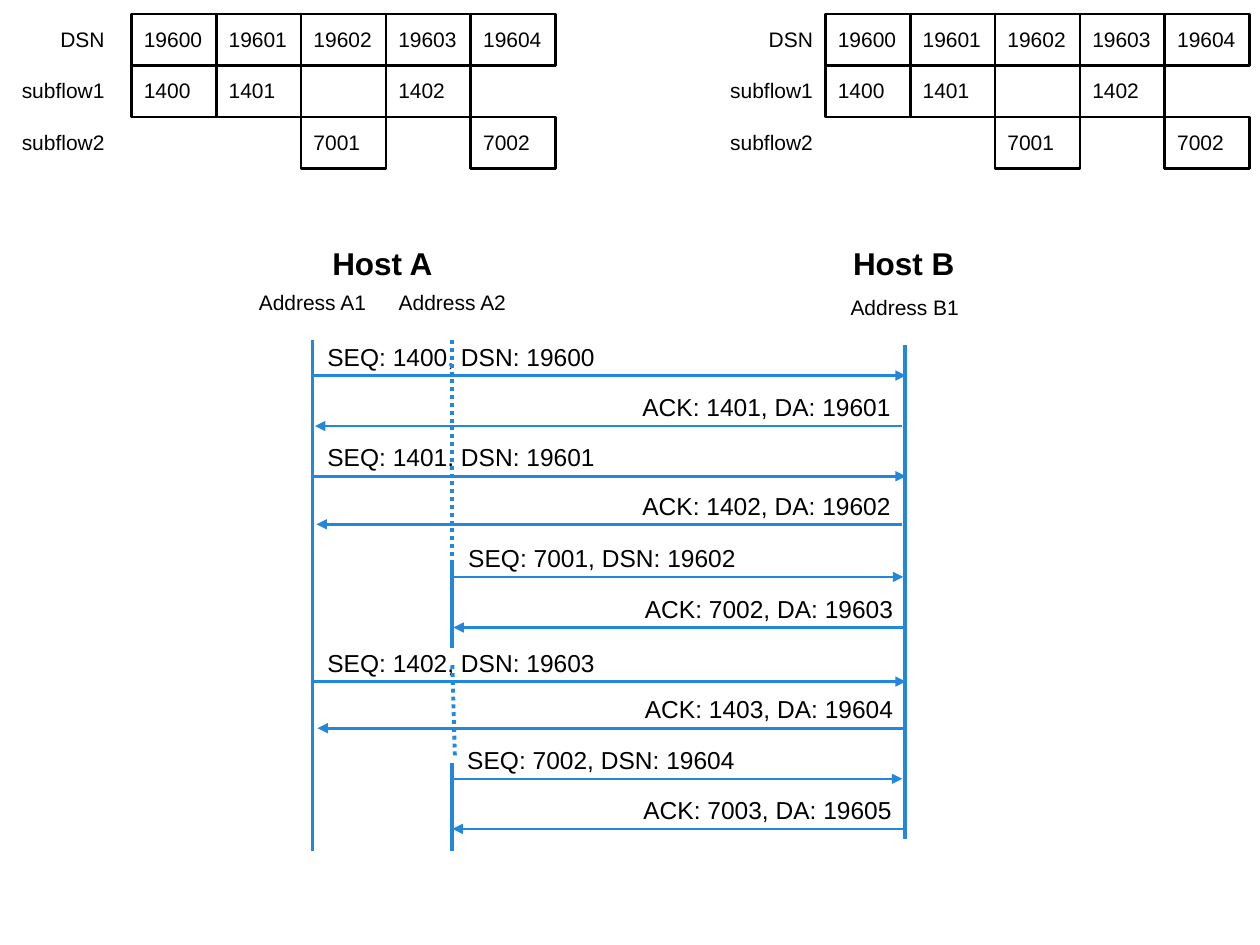
"""Builds a slide showing sequence numbers of two subflows between two hosts."""
from dataclasses import dataclass

from lxml import etree
from pptx import Presentation
from pptx import util as u
from pptx.dml.color import RGBColor
from pptx.enum import dml, shapes, text
from pptx.oxml import ns


@dataclass(frozen=True)
class Theme:
    font: str = "Arial"
    ink: RGBColor = RGBColor(0, 0, 0)
    flow: RGBColor = RGBColor(0x23, 0x88, 0xDB)
    heading: int = 18
    message: int = 14
    label: int = 12
    lifeline: float = 2.25
    stroke: float = 1.5
    inset: float = 0.25


THEME = Theme()
LEFT, CENTER, RIGHT = text.PP_ALIGN.LEFT, text.PP_ALIGN.CENTER, text.PP_ALIGN.RIGHT
CELL_WIDTH, CELL_HEIGHT, MAPPING_TOP = 1.71, 1.04, 0.28
A1, A2, B1 = 6.3, 9.12, 18.24
MESSAGE_HEIGHT = 0.93

MAPPING = [
    ("DSN", 1.71, ["19600", "19601", "19602", "19603", "19604"]),
    ("subflow1", 2.3, ["1400", "1401", None, "1402", None]),
    ("subflow2", 2.3, [None, None, "7001", None, "7002"]),
]
MESSAGES = [
    ("SEQ: 1400, DSN: 19600", A1, 18.26, 7.57, 10.16),
    ("ACK: 1401, DA: 19601", 18.19, 6.35, 8.59, 10.16),
    ("SEQ: 1401, DSN: 19601", A1, 18.26, 9.6, 10.16),
    ("ACK: 1402, DA: 19602", 18.19, 6.38, 10.57, 10.16),
    ("SEQ: 7001, DSN: 19602", 9.14, 18.21, 11.63, 8.59),
    ("ACK: 7002, DA: 19603", 18.24, 9.14, 12.65, 7.82),
    ("SEQ: 1402, DSN: 19603", A1, 18.26, 13.74, 10.16),
    ("ACK: 1403, DA: 19604", 18.24, 6.4, 14.68, 10.16),
    ("SEQ: 7002, DSN: 19604", A2, 18.19, 15.7, 8.59),
    ("ACK: 7003, DA: 19605", 18.21, A2, 16.71, 7.82),
]
HOSTS = [("Host A", 7.71, 2.82), ("Host B", 18.22, 3.28)]
ADDRESSES = [("Address A1", A1, 5.59), ("Address A2", A2, 5.59), ("Address B1", B1, 5.69)]
ACTIVE_LIFELINES = [(A1, 6.86, 17.15), (B1, 6.96, 16.92), (A2, 11.33, 13.06), (A2, 15.39, 17.15)]
IDLE_LIFELINES = [(A2, A2, 6.86, 11.76), (A2, 9.17, 13.41, 15.27)]


def write_text(shape, content, size, align, bold=False, anchor=text.MSO_ANCHOR.TOP):
    """Put one formatted run in a shape."""
    frame = shape.text_frame
    frame.word_wrap = True
    frame.auto_size = text.MSO_AUTO_SIZE.SHAPE_TO_FIT_TEXT
    frame.vertical_anchor = anchor
    frame.margin_left = frame.margin_right = u.Cm(THEME.inset)
    frame.margin_top = frame.margin_bottom = u.Cm(THEME.inset)
    paragraph = frame.paragraphs[0]
    paragraph.alignment = align
    run = paragraph.add_run()
    run.text = content
    run.font.name = THEME.font
    run.font.size = u.Pt(size)
    run.font.bold = bold
    run.font.color.rgb = THEME.ink


def add_label(collection, content, box, size, align, **style):
    """Add a text box at left, top, width and height."""
    label = collection.add_textbox(*map(u.Cm, box))
    write_text(label, content, size, align, **style)


def add_cell(collection, content, left, top):
    """Add an outlined cell holding a sequence number."""
    cell = collection.add_shape(
        shapes.MSO_SHAPE.RECTANGLE, *map(u.Cm, (left, top, CELL_WIDTH, CELL_HEIGHT)))
    cell.shadow.inherit = False
    cell.fill.background()
    cell.line.color.rgb = THEME.ink
    cell.line.width = u.Pt(THEME.stroke)
    write_text(cell, content, THEME.label, LEFT)


def add_line(collection, start, end, width, dotted=False, arrow=False):
    """Add a straight line, optionally dotted or with an arrowhead."""
    line = collection.add_connector(
        shapes.MSO_CONNECTOR.STRAIGHT, *map(u.Cm, (*start, *end)))
    line.line.color.rgb = THEME.flow
    line.line.width = u.Pt(width)
    if dotted:
        line.line.dash_style = dml.MSO_LINE.ROUND_DOT
    properties = line._element.spPr
    if arrow:
        outline = properties.find(ns.qn("a:ln"))
        etree.SubElement(outline, ns.qn("a:tailEnd"), type="triangle")
    etree.SubElement(properties, ns.qn("a:effectLst"))


def add_mapping(collection, left, label_right):
    """Add the grid that maps data sequence numbers to subflows."""
    for row, (name, width, numbers) in enumerate(MAPPING):
        top = MAPPING_TOP + row * CELL_HEIGHT
        add_label(collection, name, (label_right - width, top, width, CELL_HEIGHT),
                  THEME.label, RIGHT)
        for column, number in enumerate(numbers):
            if number:
                add_cell(collection, number, left + column * CELL_WIDTH, top)


def add_message(collection, content, start, end, y, width):
    """Add a grouped arrow with its caption on the sender's side."""
    group = collection.add_group_shape().shapes
    add_line(group, (start, y), (end, y), THEME.stroke, arrow=True)
    forward = start < end
    left = start + 0.05 if forward else start + 0.02 - width
    add_label(group, content, (left, y - MESSAGE_HEIGHT, width, MESSAGE_HEIGHT),
              THEME.message, LEFT if forward else RIGHT)


def main():
    """Build and save the slide."""
    presentation = Presentation()
    presentation.slide_width, presentation.slide_height = u.Cm(25.4), u.Cm(19.05)
    slide = presentation.slides.add_slide(presentation.slide_layouts[6])
    collection = slide.shapes

    for left, label_right in ((2.65, 2.36), (16.64, 16.64)):
        add_mapping(collection, left, label_right)
    for name, center, width in HOSTS:
        add_label(collection, name, (center - width / 2, 4.67, width, 1.27),
                  THEME.heading, CENTER, bold=True, anchor=text.MSO_ANCHOR.MIDDLE)
    for name, center, top in ADDRESSES:
        add_label(collection, name, (center - 2.11, top, 4.22, 1.27), THEME.label, CENTER)
    for x, top, bottom in ACTIVE_LIFELINES:
        add_line(collection, (x, top), (x, bottom), THEME.lifeline)
    for message in MESSAGES:
        add_message(collection, *message)
    for start, end, top, bottom in IDLE_LIFELINES:
        add_line(collection, (start, top), (end, bottom), THEME.lifeline, dotted=True)

    presentation.save("out.pptx")


if __name__ == "__main__":
    main()
